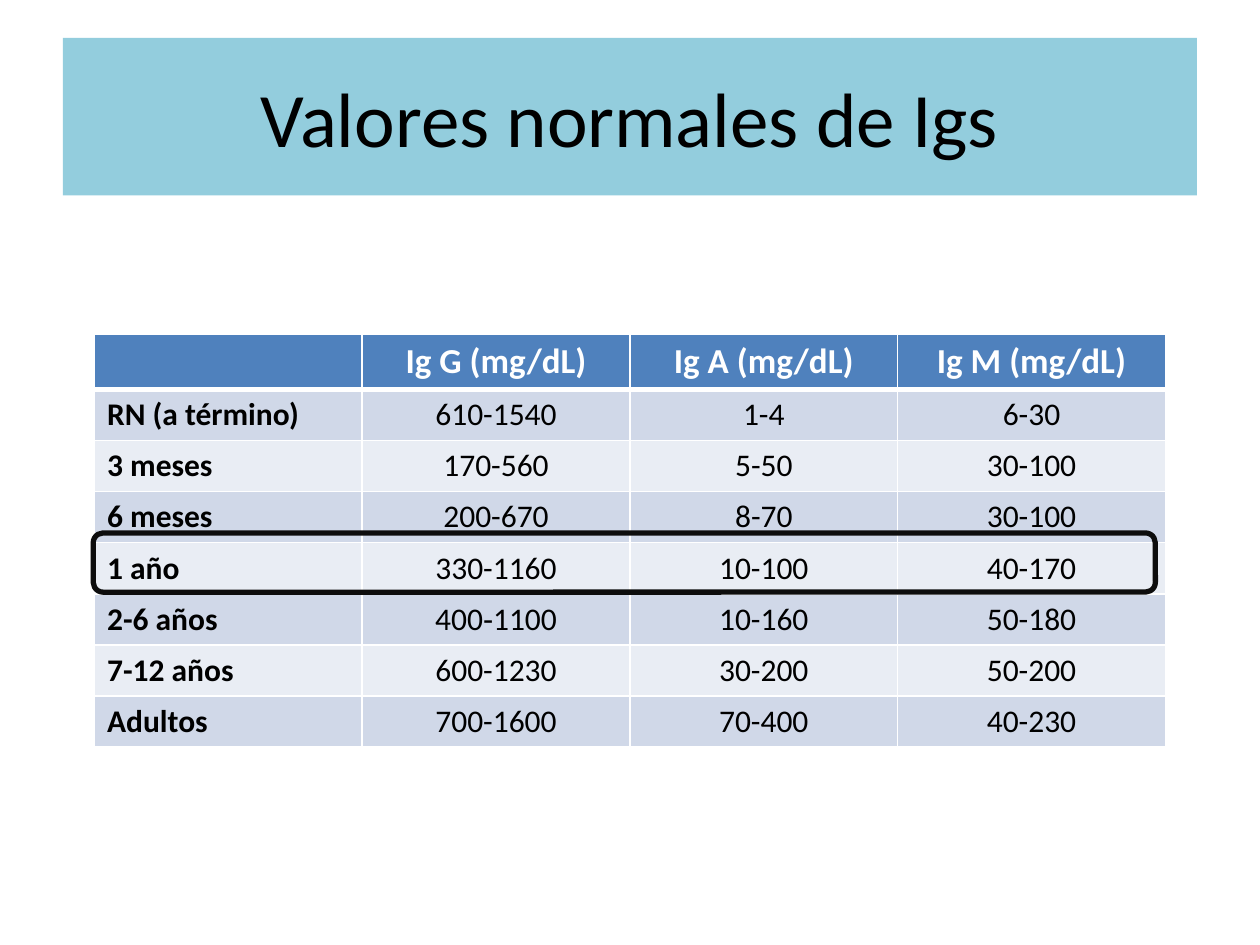
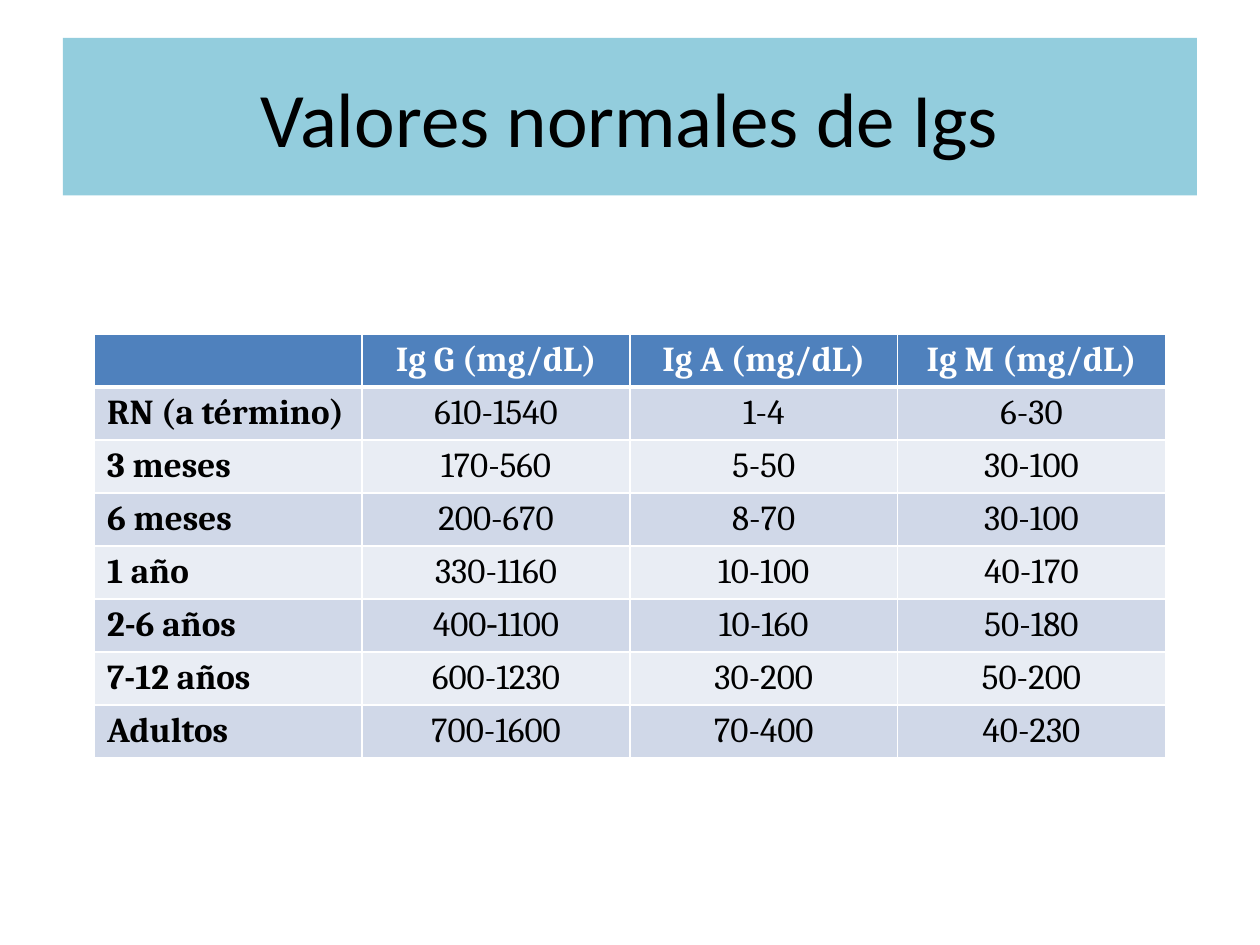
import pptx
import pptx.util
import pptx.dml.color
import pptx.enum.shapes
import pptx.enum.text
import pptx.oxml
import pptx.oxml.ns

PX = 4572  # EMU per px, 200 px to the inch
RGB = pptx.dml.color.RGBColor.from_string
PT = pptx.util.Pt
ALIGN = pptx.enum.text.PP_ALIGN
SHAPE = pptx.enum.shapes.MSO_SHAPE

theme = {
    "band": RGB("93CDDD"), "head": RGB("4F81BD"),
    "rows": [RGB("D0D8E8"), RGB("E9EDF4")],
    "ink": RGB("000000"), "white": RGB("FFFFFF"), "ring": RGB("0D0D0D"),
    "title": PT(44), "label": PT(20), "edge": 1, "rule": 3,
}

title = "Valores normales de Igs"
grid = [
    ["", "Ig G (mg/dL)", "Ig A (mg/dL)", "Ig M (mg/dL)"],
    ["RN (a término)", "610-1540", "1-4", "6-30"],
    ["3 meses", "170-560", "5-50", "30-100"],
    ["6 meses", "200-670", "8-70", "30-100"],
    ["1 año", "330-1160", "10-100", "40-170"],
    ["2-6 años", "400‐1100", "10-160", "50-180"],
    ["7-12 años", "600-1230", "30-200", "50-200"],
    ["Adultos", "700-1600", "70-400", "40-230"],
]
# Font and body size of the table, and whether the 1-year row is ringed
pages = [
    {"face": "Calibri", "size": PT(18), "ring": True},
    {"face": "Cambria", "size": PT(20), "ring": False},
]
row_h, col_w = 81, 425


def write(frame, text, align, tone, **form):
    para = frame.paragraphs[0]
    para.alignment = align
    run = para.add_run()
    run.text = text
    run.font.color.rgb = tone
    for key, val in form.items():
        setattr(run.font, key, val)


def border(cell, below):
    props = cell._tc.get_or_add_tcPr()
    edge = theme["edge"]
    for side, width in {"L": edge, "R": edge, "T": edge, "B": below}.items():
        props.append(pptx.oxml.parse_xml(
            f'<a:ln{side} {pptx.oxml.ns.nsdecls("a")} w="{PT(width)}">'
            f'<a:solidFill><a:srgbClr val="{theme["white"]}"/></a:solidFill>'
            f'</a:ln{side}>'))


deck = pptx.Presentation()
deck.slide_width, deck.slide_height = 2000 * PX, 1500 * PX

for page in pages:
    slide = deck.slides.add_slide(deck.slide_layouts[6])

    # Title band
    band = slide.shapes.add_shape(
        SHAPE.RECTANGLE, 100 * PX, 60 * PX, 1800 * PX, 250 * PX)
    band.shadow.inherit = False
    band.fill.solid()
    band.fill.fore_color.rgb = theme["band"]
    band.line.fill.background()
    band.text_frame.vertical_anchor = pptx.enum.text.MSO_ANCHOR.MIDDLE
    write(band.text_frame, title, ALIGN.CENTER, theme["ink"],
          name="Calibri", size=theme["title"])

    # Table of normal values
    table = slide.shapes.add_table(
        len(grid), len(grid[0]), 150 * PX, 530 * PX,
        len(grid[0]) * col_w * PX, len(grid) * row_h * PX).table
    table.horz_banding = False
    for r, row in enumerate(grid):
        head = r == 0
        for c, text in enumerate(row):
            cell = table.cell(r, c)
            border(cell, theme["rule"] if head else theme["edge"])
            cell.fill.solid()
            cell.fill.fore_color.rgb = (
                theme["head"] if head else theme["rows"][(r - 1) % 2])
            if text:
                write(cell.text_frame, text,
                      ALIGN.CENTER if c else ALIGN.LEFT,
                      theme["white"] if head else theme["ink"],
                      name=page["face"], bold=head or c == 0,
                      size=theme["label"] if head else page["size"])

    # Ring around the 1-year row
    if page["ring"]:
        ring = slide.shapes.add_shape(
            SHAPE.ROUNDED_RECTANGLE, 148 * PX, 846 * PX, 1686 * PX, 94 * PX)
        ring.shadow.inherit = False
        ring.fill.background()
        ring.line.color.rgb = theme["ring"]
        ring.line.width = PT(theme["rule"])

deck.save("out.pptx")
